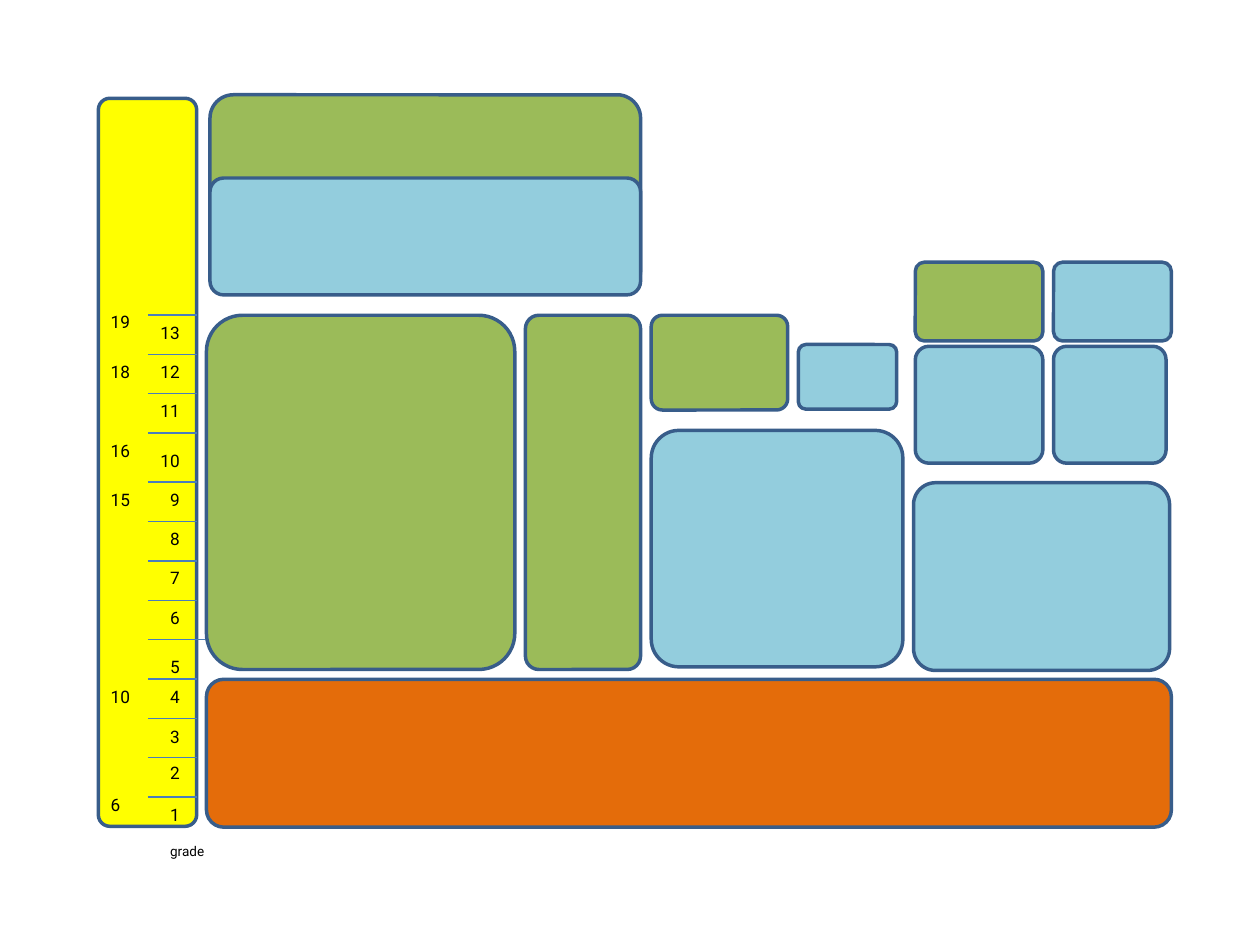
import pptx
import pptx.dml.color
import pptx.enum.shapes
import pptx.oxml
import pptx.util
from pptx.util import Inches

COLORS = {
    "yellow": "FFFF00", "orange": "E46C0A", "green": "9BBB59", "blue": "93CDDD",
    "outline": "385D8A", "tick": "4A7EBB", "text": "000000",
}


def rgb(name):
    return pptx.dml.color.RGBColor.from_string(COLORS[name])


def add_label(text, left, top, width=0.56, height=0.41, size=14):
    label = slide.shapes.add_textbox(Inches(left), Inches(top), Inches(width), Inches(height))
    frame = label.text_frame
    frame.word_wrap = True
    frame.margin_left = frame.margin_right = Inches(0.14)
    frame.margin_top = frame.margin_bottom = Inches(0.08)
    frame.text = text
    font = frame.paragraphs[0].runs[0].font
    font.name = "Roboto"
    font.size = pptx.util.Pt(size)
    font.color.rgb = rgb("text")


deck = pptx.Presentation()
deck.slide_width = Inches(14.22)
deck.slide_height = Inches(10.67)
slide = deck.slides.add_slide(deck.slide_layouts[6])

# Age and grade scale, then the blocks: color, left, top, width, height
blocks = [
    ("yellow", 1.11, 1.11, 1.11, 8.22),
    ("orange", 2.33, 7.67, 10.89, 1.67),
    ("green", 2.37, 1.07, 4.86, 2.25),
    ("blue", 2.37, 2.01, 4.86, 1.32),
    ("green", 2.33, 3.56, 3.48, 4),
    ("green", 5.93, 3.56, 1.3, 4),
    ("blue", 7.35, 4.86, 2.84, 2.67),
    ("blue", 10.31, 5.45, 2.89, 2.12),
    ("green", 7.35, 3.56, 1.54, 1.07),
    ("blue", 9.01, 3.89, 1.11, 0.73),
    ("blue", 10.33, 3.91, 1.44, 1.32),
    ("blue", 11.89, 3.91, 1.27, 1.32),
    ("green", 10.33, 2.96, 1.44, 0.89),
    ("blue", 11.89, 2.96, 1.33, 0.89),
]
for color, left, top, width, height in blocks:
    block = slide.shapes.add_shape(
        pptx.enum.shapes.MSO_SHAPE.ROUNDED_RECTANGLE,
        Inches(left), Inches(top), Inches(width), Inches(height))
    block.adjustments[0] = 0.117
    block.shadow.inherit = False
    block.fill.solid()
    block.fill.fore_color.rgb = rgb(color)
    block.line.color.rgb = rgb("outline")
    block.line.width = pptx.util.Pt(2.84)

# Grade ticks: two evenly spaced runs, the fifth tick reaching the blocks
tick_step = 4 / 9
tick_tops = [9 - i * tick_step for i in range(9)] + [4.89 - i * tick_step for i in range(4)]
for number, top in enumerate(tick_tops, start=1):
    right = 2.31 if number == 5 else 2.22
    tick = slide.shapes.add_connector(
        pptx.enum.shapes.MSO_CONNECTOR.STRAIGHT,
        Inches(1.67), Inches(top), Inches(right), Inches(top))
    tick.line.color.rgb = rgb("tick")
    tick.line.width = pptx.util.Pt(1.07)
    tick._element.spPr.append(pptx.oxml.parse_xml(
        '<a:effectLst xmlns:a="http://schemas.openxmlformats.org/drawingml/2006/main"/>'))

# Grade numbers
grade_tops = [9, 8.53, 8.12, 7.67, 7.33, 6.78, 6.33, 5.89, 5.44, 5, 4.44, 4, 3.56]
for grade, top in enumerate(grade_tops, start=1):
    add_label(str(grade), 1.78 if grade < 10 else 1.67, top)
add_label("grade", 1.78, 9.44, width=0.93, height=0.35, size=11)

# Age numbers
age_tops = {6: 8.89, 10: 7.67, 15: 5.44, 16: 4.89, 18: 4, 19: 3.44}
for age, top in age_tops.items():
    add_label(str(age), 1.11, top)

deck.save("out.pptx")
